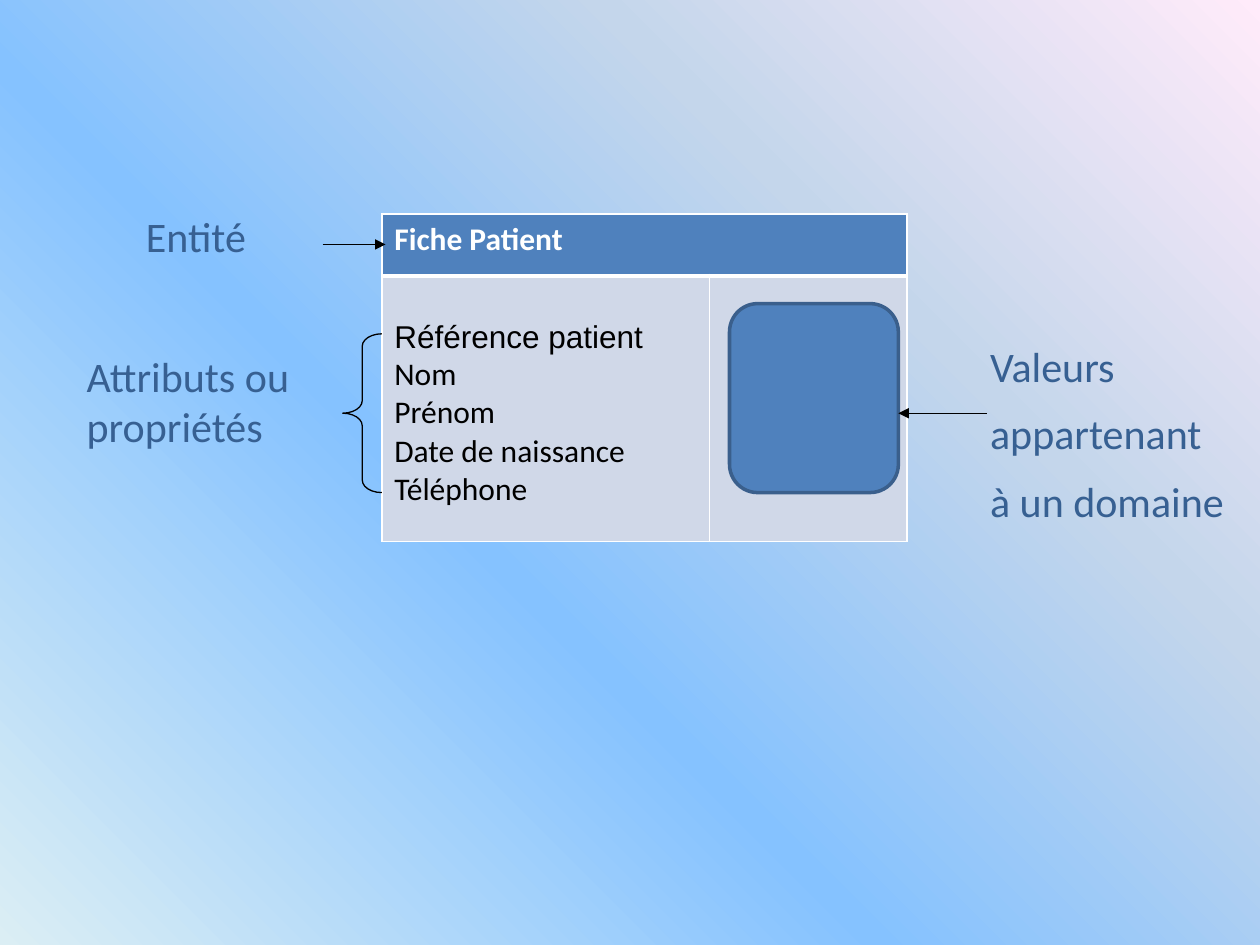
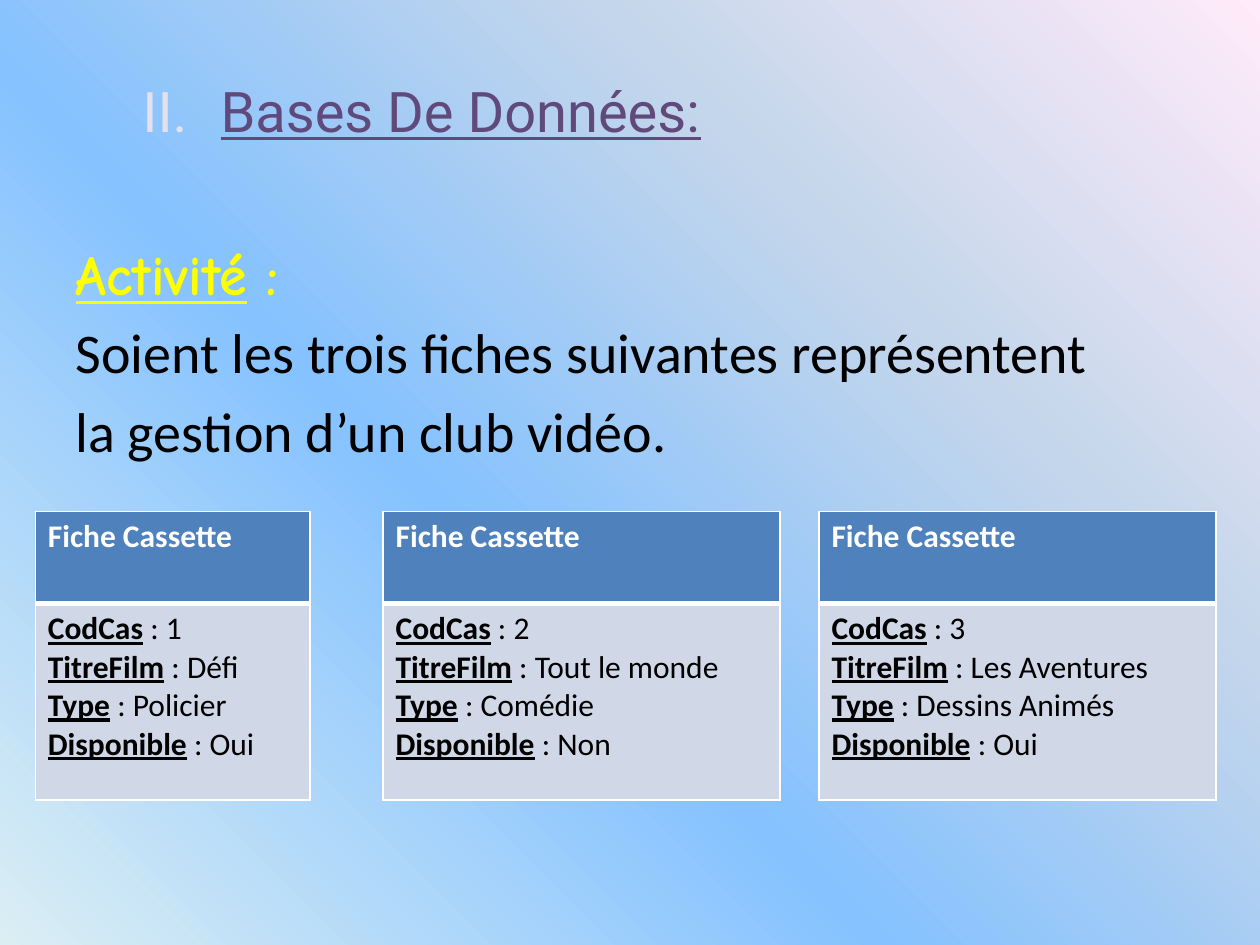
from lxml.etree import SubElement
from pptx import Presentation
from pptx.dml.color import RGBColor
from pptx.enum.shapes import MSO_CONNECTOR, MSO_SHAPE
from pptx.enum.text import MSO_ANCHOR, MSO_AUTO_SIZE, PP_ALIGN
from pptx.oxml.ns import qn
from pptx.util import Emu, Inches, Pt

BLUE, PALE, NAVY, LABEL = "4F81BD", "D0D8E8", "3A5F8C", "376092"
WHITE, BLACK, YELLOW = "FFFFFF", "000000", "FFFF00"
PURPLE, LILAC = "604A7B", "E6E0EC"
BACKDROP = [(0, "DBEEF4"), (40, "85C2FF"), (70, "C4D6EB"), (100, "FFEBFA")]
NO_STYLE = "{2D5ABB26-0587-4C30-8999-92F81FD0307C}"
SIDES = "LRTB"


def rgb(value):
    return RGBColor.from_string(value)


def inches(*values):
    return [Inches(v) for v in values]


def add_color(parent, value):
    SubElement(parent, qn("a:srgbClr"), val=value)


def paint_backdrop(master):
    fill = master.background.fill
    fill.gradient()
    fill.gradient_angle = 45
    stops = master.element.find(".//" + qn("a:gsLst"))
    for stop in list(stops):
        stops.remove(stop)
    for percent, color in BACKDROP:
        add_color(SubElement(stops, qn("a:gs"), pos=str(percent * 1000)), color)


def add_run(p, text, size, color, font="Calibri", bold=False, underline=False):
    r = p.add_run()
    r.text = text
    f = r.font
    f.size, f.name, f.bold, f.underline = Pt(size), font, bold, underline
    f.color.rgb = rgb(color)


def paragraphs(tf, count):
    return [tf.paragraphs[0]] + [tf.add_paragraph() for _ in range(count - 1)]


def indent(p, left, first):
    """Set a hanging indent in inches and return the paragraph properties."""
    pPr = p._p.get_or_add_pPr()
    pPr.set("marL", str(Inches(left)))
    pPr.set("indent", str(Inches(first)))
    return pPr


def add_label(s, box, *lines):
    tf = s.shapes.add_textbox(*inches(*box)).text_frame
    tf.word_wrap = True
    for p, line in zip(paragraphs(tf, len(lines)), lines):
        p.space_after = Pt(10)
        add_run(p, line, 24, LABEL)


def add_arrow(s, x1, x2, y):
    line = s.shapes.add_connector(MSO_CONNECTOR.STRAIGHT, *inches(x1, y, x2, y))
    line.line.color.rgb = rgb(BLACK)
    line.line.width = Pt(0.75)
    spPr = line._element.spPr
    SubElement(spPr.find(qn("a:ln")), qn("a:tailEnd"), type="triangle")
    SubElement(spPr, qn("a:effectLst"))


def add_outlined(s, kind, box, line, width, fill=None):
    sp = s.shapes.add_shape(kind, *inches(*box))
    sp.shadow.inherit = False
    if fill:
        sp.fill.solid()
        sp.fill.fore_color.rgb = rgb(fill)
    else:
        sp.fill.background()
    sp.line.color.rgb = rgb(line)
    sp.line.width = Pt(width)
    return sp


def add_grid(s, left, top, widths, heights):
    """Add an unstyled table with the given column widths and row heights."""
    frame = s.shapes.add_table(len(heights), len(widths),
                               *inches(left, top, sum(widths), sum(heights)))
    table = frame.table
    table._tbl.tblPr.find(qn("a:tableStyleId")).text = NO_STYLE
    for column, width in zip(table.columns, widths):
        column.width = Inches(width)
    for row, height in zip(table.rows, heights):
        row.height = Inches(height)
    return table


def dress_cell(cell, fill=None, sides=SIDES, bottom=1):
    """Fill a cell and draw its white borders, in points."""
    if fill:
        cell.fill.solid()
        cell.fill.fore_color.rgb = rgb(fill)
    else:
        cell.fill.background()
    tcPr = cell._tc.get_or_add_tcPr()
    for i, side in enumerate(sides):
        width = bottom if side == "B" else 1
        ln = SubElement(tcPr, qn("a:ln" + side), w=str(Pt(width)))
        add_color(SubElement(ln, qn("a:solidFill")), WHITE)
        tcPr.insert(i, ln)


def head_cell(cell, text):
    dress_cell(cell, BLUE, bottom=3)
    add_run(cell.text_frame.paragraphs[0], text, 18, WHITE, bold=True)


def patient_card(s, left, top):
    table = add_grid(s, left, top, [2.6, 1.57], [0.49, 2.11])
    head_cell(table.cell(0, 0), "Fiche Patient")
    dress_cell(table.cell(0, 1), BLUE, bottom=3)
    table.cell(0, 0).merge(table.cell(0, 1))
    fields = table.cell(1, 0)
    dress_cell(fields, PALE)
    dress_cell(table.cell(1, 1), PALE)
    fields.margin_top = Inches(0.35)
    names = ["Référence patient", "Nom", "Prénom", "Date de naissance", "Téléphone"]
    for i, (p, name) in enumerate(zip(paragraphs(fields.text_frame, 5), names)):
        add_run(p, name, 18, BLACK, "Calibri" if i else "Arial")
    add_outlined(s, MSO_SHAPE.ROUNDED_RECTANGLE,
                 (left + 2.76, top + 0.71, 1.34, 1.5), NAVY, 2, BLUE)
    brace = add_outlined(s, MSO_SHAPE.LEFT_BRACE,
                         (left - 0.31, top + 0.95, 0.31, 1.26), BLACK, 0.75)
    brace.adjustments[0] = 0.32


def entity_slide(prs):
    s = prs.slides.add_slide(prs.slide_layouts[6])
    patient_card(s, 3.03, 1.7)
    add_label(s, (0.59, 2.73, 2.37, 1), "Attributs ou propriétés")
    add_label(s, (1.06, 1.62, 1.73, 0.51), "Entité")
    add_label(s, (7.76, 2.65, 2.89, 1.36), "Valeurs", "appartenant", "à un domaine")
    add_arrow(s, 2.56, 3.06, 1.94)
    add_arrow(s, 7.83, 7.13, 3.28)


def place(sp, box):
    sp.left, sp.top, sp.width, sp.height = inches(*box)
    sp.text_frame.auto_size = MSO_AUTO_SIZE.NONE
    return sp.text_frame


def numbered_title(s, box):
    tf = place(s.shapes.title, box)
    tf.vertical_anchor = MSO_ANCHOR.MIDDLE
    p = tf.paragraphs[0]
    p.alignment = PP_ALIGN.LEFT
    pPr = indent(p, 1.15, -0.62)
    add_color(SubElement(pPr, qn("a:buClr")), LILAC)
    SubElement(pPr, qn("a:buFont"), typeface="+mj-lt")
    SubElement(pPr, qn("a:buAutoNum"), type="romanUcPeriod", startAt="2")
    add_run(p, "Bases De Données:", 32, PURPLE, "Roboto", underline=True)


def activity_text(s, box):
    tf = place(s.placeholders[1], box)
    tf.margin_top = Inches(0.67)
    heading, *body = paragraphs(tf, 3)
    for p in (heading, *body):
        SubElement(indent(p, 0.38, -0.38), qn("a:buNone"))
    add_run(heading, "Activité", 32, YELLOW, "Comic Neue", True, True)
    add_run(heading, " :", 32, YELLOW, "Comic Neue", True)
    lines = ["Soient les trois fiches suivantes représentent",
             "la gestion d’un club vidéo."]
    for p, line in zip(body, lines):
        add_run(p, line, 32, BLACK)


def cassette_cards(s, left, top):
    """Three cards in one table, parted by empty columns."""
    table = add_grid(s, left, top, [2.18, 0.58, 3.15, 0.31, 3.15], [0.73, 1.56])
    fields = ["CodCas", "TitreFilm", "Type", "Disponible"]
    cassettes = [("1", "Défi", "Policier", "Oui"),
                 ("2", "Tout le monde", "Comédie", "Non"),
                 ("3", "Les Aventures", "Dessins Animés", "Oui")]
    for i, values in enumerate(cassettes):
        head_cell(table.cell(0, 2 * i), "Fiche Cassette")
        card = table.cell(1, 2 * i)
        dress_cell(card, PALE)
        for p, field, value in zip(paragraphs(card.text_frame, 4), fields, values):
            add_run(p, field, 18, BLACK, bold=True, underline=True)
            add_run(p, f" : {value}", 18, BLACK)
    for gap in (1, 3):
        for row in (0, 1):
            dress_cell(table.cell(row, gap), sides="LR")
        table.cell(0, gap).merge(table.cell(1, gap))


def activity_slide(prs):
    s = prs.slides.add_slide(prs.slide_layouts[1])
    numbered_title(s, (0.5, 0.29, 9, 1.17))
    activity_text(s, (0.5, 1.23, 9, 5.83))
    cassette_cards(s, 0.28, 4.06)


def main():
    prs = Presentation()
    prs.slide_width, prs.slide_height = inches(10, 7.5)
    paint_backdrop(prs.slide_master)
    entity_slide(prs)
    activity_slide(prs)
    prs.save("out.pptx")


if __name__ == "__main__":
    main()
